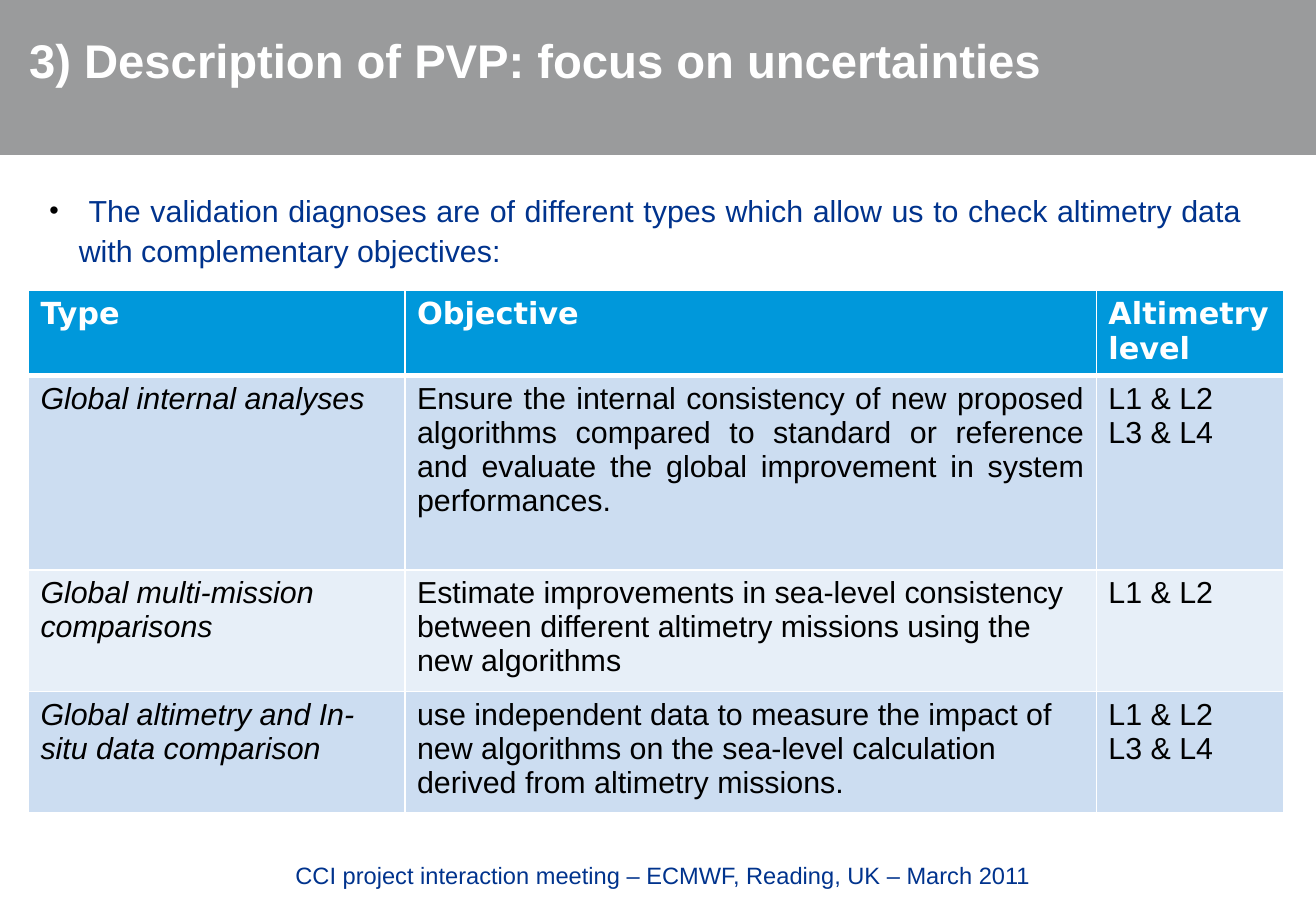
from lxml import etree
from pptx import Presentation
from pptx import util as u
from pptx.dml.color import RGBColor
from pptx.enum import shapes, text
from pptx.oxml import ns

PX = 7620  # 120 px to the inch
WHITE, BLACK, NAVY = "FFFFFF", "000000", "00338D"
GREY, BLUE, PALE, PALER = "9A9B9C", "0098DB", "CCDDF1", "E7EFF8"
BODY, HEADING = "Arial", "DejaVu Sans"

COLUMNS = [372, 683, 185]
ROWS = [83, 192, 120, 120]
DIAGNOSES = [
    ("Type", "Objective", "Altimetry level"),
    ("Global internal analyses",
     "Ensure the internal consistency of new proposed algorithms compared to "
     "standard or reference and evaluate the global improvement in system performances.",
     "L1 & L2\nL3 & L4"),
    ("Global multi-mission comparisons",
     "Estimate improvements in sea-level consistency between different altimetry "
     "missions using the new algorithms",
     "L1 & L2"),
    ("Global altimetry and In-situ data comparison",
     "use independent data to measure the impact of new algorithms on the "
     "sea-level calculation derived from altimetry missions.",
     "L1 & L2\nL3 & L4"),
]


def px(*lengths):
    return [u.Emu(length * PX) for length in lengths]


def colour(value):
    return RGBColor.from_string(value)


def style(font, size, ink, name=BODY, bold=False, italic=False):
    font.size, font.name = u.Pt(size), name
    font.bold, font.italic = bold, italic
    font.color.rgb = colour(ink)


def add_band(page, place, fill):
    band = page.shapes.add_shape(shapes.MSO_SHAPE.RECTANGLE, *px(*place))
    band.shadow.inherit = False
    band.fill.solid()
    band.fill.fore_color.rgb = colour(fill)
    band.line.fill.background()


def add_text(page, place, words, size, ink, bold=False):
    """Add a wrapped text box and return its only paragraph."""
    box = page.shapes.add_textbox(*px(*place))
    box.text_frame.word_wrap = True
    box.text_frame.text = words
    para = box.text_frame.paragraphs[0]
    style(para.runs[0].font, size, ink, bold=bold)
    return para


def indent(para, margin, first_line):
    properties = para._p.get_or_add_pPr()
    properties.set("marL", str(margin * PX))
    properties.set("indent", str(first_line * PX))
    return properties


def add_bullet(para, hang):
    properties = indent(para, hang, -hang)
    bullet_colour = etree.SubElement(properties, ns.qn("a:buClr"))
    etree.SubElement(bullet_colour, ns.qn("a:srgbClr"), val=BLACK)
    etree.SubElement(properties, ns.qn("a:buFont"), typeface=BODY)
    etree.SubElement(properties, ns.qn("a:buChar"), char="•")


def add_borders(cell, widths):
    properties = cell._tc.get_or_add_tcPr()
    for side, width in zip("LRTB", widths):
        line = etree.SubElement(properties, ns.qn(f"a:ln{side}"), w=str(u.Pt(width)))
        fill = etree.SubElement(line, ns.qn("a:solidFill"))
        etree.SubElement(fill, ns.qn("a:srgbClr"), val=WHITE)


def fill_cell(cell, words, row, column):
    header = row == 0
    # The rule under the header is thicker than the others
    add_borders(cell, (1, 1, 3 if row == 1 else 1, 3 if header else 1))
    cell.fill.solid()
    cell.fill.fore_color.rgb = colour(BLUE if header else PALE if row % 2 else PALER)
    cell.text_frame.text = words
    for para in cell.text_frame.paragraphs:
        for span in para.runs:
            if header:
                style(span.font, 18, WHITE, HEADING, bold=True)
            else:
                style(span.font, 18, BLACK, italic=column == 0)


def add_diagnoses(page, left, top):
    frame = page.shapes.add_table(len(ROWS), len(COLUMNS),
                                  *px(left, top, sum(COLUMNS), sum(ROWS)))
    table = frame.table
    table.first_row = table.horz_banding = False
    for column, width in zip(table.columns, px(*COLUMNS)):
        column.width = width
    for row, height in zip(table.rows, px(*ROWS)):
        row.height = height
    for r, entries in enumerate(DIAGNOSES):
        for c, words in enumerate(entries):
            fill_cell(table.cell(r, c), words, r, c)
    table.cell(1, 1).text_frame.paragraphs[0].alignment = text.PP_ALIGN.JUSTIFY


def main():
    deck = Presentation()
    deck.slide_width, deck.slide_height = px(1300, 900)
    page = deck.slides.add_slide(deck.slide_layouts[6])

    # Title band
    add_band(page, (0, 0, 1300, 153), GREY)
    title = add_text(page, (17, 34, 1243, 92),
                     "3) Description of PVP: focus on uncertainties", 28, WHITE, bold=True)
    title.line_spacing = 0.85

    # Footer
    footer = add_text(page, (264, 845, 821, 55),
                      "CCI project interaction meeting – ECMWF, Reading, UK – March 2011",
                      14, NAVY)
    indent(footer, 16, 0)

    # Table of validation diagnoses
    add_diagnoses(page, 28, 287)

    # Introductory bullet
    intro = add_text(page, (37, 180, 1201, 85), " ", 16, BLACK)
    intro.runs[0].font.name = HEADING
    span = intro.add_run()
    span.text = ("The validation diagnoses are of different types which allow us to check "
                 "altimetry data with complementary objectives:")
    style(span.font, 18, NAVY)
    add_bullet(intro, 29)
    intro.alignment = text.PP_ALIGN.JUSTIFY
    intro.line_spacing = 1.1

    deck.save("out.pptx")


if __name__ == "__main__":
    main()
